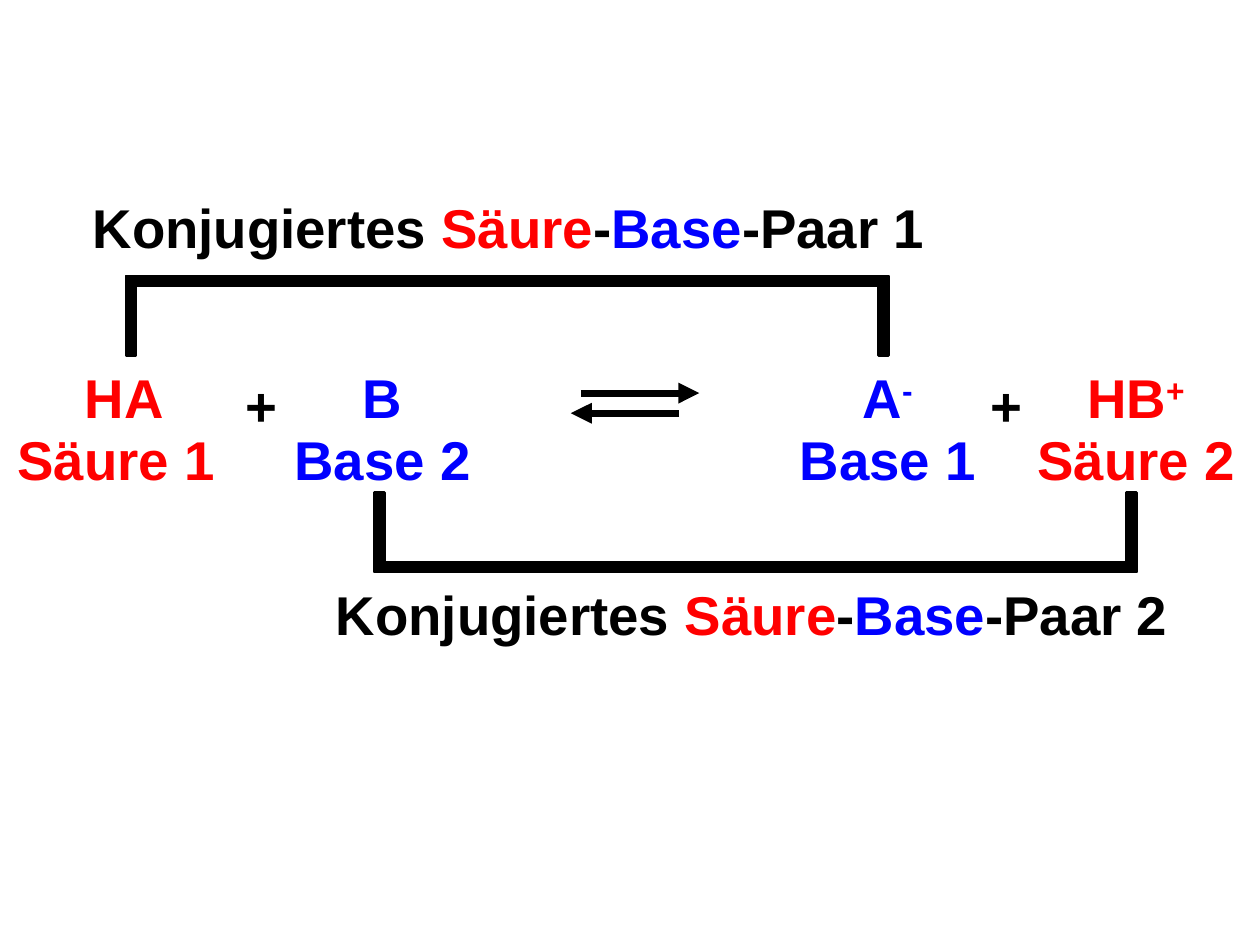
from pptx import Presentation
from pptx.dml.color import RGBColor
from pptx.enum.shapes import MSO_CONNECTOR as Conn, MSO_SHAPE as Shape
from pptx.enum.text import PP_ALIGN as Align
from pptx.oxml.ns import qn
from pptx.util import Inches, Pt
from lxml.etree import SubElement

RED = RGBColor(255, 0, 0)
BLUE = RGBColor(0, 0, 255)
BLACK = RGBColor(0, 0, 0)

deck = Presentation()
deck.slide_width, deck.slide_height = Inches(10), Inches(7.5)
slide = deck.slides.add_slide(deck.slide_layouts[6])
shapes = slide.shapes

# Grid of 100 columns by 100 rows
COL, ROW = deck.slide_width / 100, deck.slide_height / 100


def grid(*nums):
    """Turn x, y, x, y ... in columns and rows into lengths."""
    return [round(n * (ROW if i % 2 else COL)) for i, n in enumerate(nums)]


def write(box, lines, aligns=(Align.CENTER,), space=1.0):
    """Each line is a list of (text, colour, raise in percent)."""
    frame = shapes.add_textbox(*grid(*box)).text_frame
    frame.word_wrap = True
    frame.margin_top = Inches(0.07)
    for i, line in enumerate(lines):
        para = frame.add_paragraph() if i else frame.paragraphs[0]
        para.alignment = aligns[i % len(aligns)]
        para.line_spacing = space
        para.space_before = Pt(1.4)
        for text, color, lift in line:
            run = para.add_run()
            run.text = text
            font = run.font
            font.name, font.size, font.bold = "Arial", Pt(31.2), True
            font.color.rgb = color
            if lift:
                font._element.set("baseline", str(lift * 1000))


# Acids and bases
TOP, WIDE, TALL = 38.4, 18.9, 14
MID, LEFT = Align.CENTER, Align.LEFT
for x, name, sign, role, color, low in [
    (0.4, "HA", "", "Säure 1", RED, LEFT),
    (20.9, "B", "", "Base 2", BLUE, MID),
    (61, "A", "-", "Base 1", BLUE, MID),
    (80.7, "HB", "+", "Säure 2", RED, MID),
]:
    head = [(name, color, 0)] + ([(sign, color, 30)] if sign else [])
    write((x, TOP, WIDE, TALL), [head, [(role, color, 0)]],
          aligns=(MID, low), space=0.9)

# Plus signs
for x in (18.5, 77.6):
    write((x, TOP, WIDE, TALL), [[("+", BLACK, 0)]], aligns=(LEFT,))

# Equilibrium arrows
for start, end, y in [(46.1, 55.5, 41.6), (53.9, 45.3, 43.73)]:
    arrow = shapes.add_connector(Conn.STRAIGHT, *grid(start, y, end, y))
    arrow.line.color.rgb = BLACK
    arrow.line.width = Pt(4)
    SubElement(arrow.line._get_or_add_ln(), qn("a:tailEnd"), type="triangle")
    SubElement(arrow._element.spPr, qn("a:effectLst"))

# Pair titles and their brackets
SPAN, LEG = 60.5, 8.4
BARX, BARY = 0.8, 1.07
for num, text_x, text_y, x, y, bar_y in [
    (1, 5.1, 19.6, 10, 29.2, 29.2),
    (2, 24.4, 60.53, 29.7, 52.13, 52.13 + LEG - BARY),
]:
    write((text_x, text_y, 70.5, 9.6), [[
        ("Konjugiertes ", BLACK, 0), ("Säure", RED, 0), ("-", BLACK, 0),
        ("Base", BLUE, 0), (f"-Paar {num}", BLACK, 0)]])
    for box in [(x, y, BARX, LEG), (x + SPAN - BARX, y, BARX, LEG),
                (x, bar_y, SPAN, BARY)]:
        bar = shapes.add_shape(Shape.RECTANGLE, *grid(*box))
        bar.shadow.inherit = False
        bar.fill.solid()
        bar.fill.fore_color.rgb = BLACK
        bar.line.color.rgb = BLACK
        bar.line.width = Pt(1.5)

deck.save("out.pptx")
